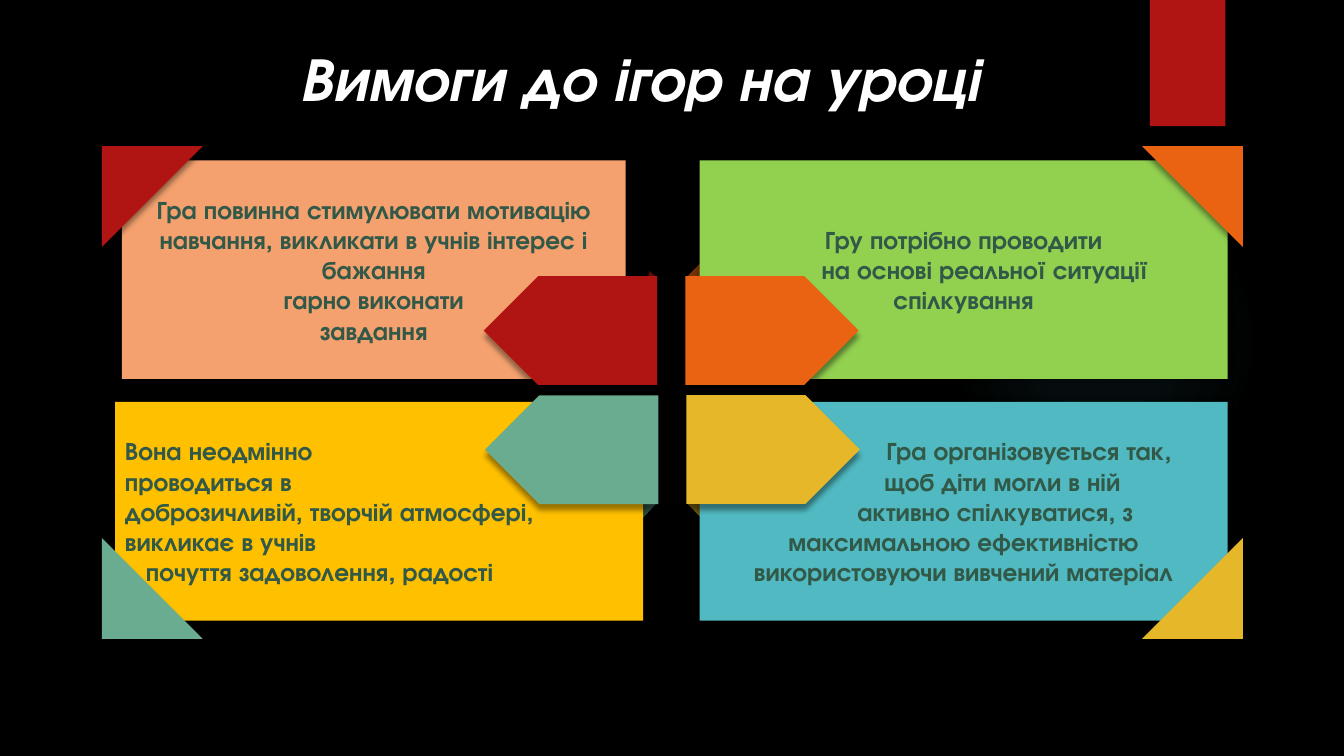
from lxml.etree import SubElement
from pptx import Presentation
from pptx.dml.color import RGBColor
from pptx.enum.shapes import MSO_SHAPE
from pptx.enum.text import MSO_ANCHOR, MSO_AUTO_SIZE, PP_ALIGN
from pptx.oxml import parse_xml
from pptx.oxml.ns import nsdecls, qn
from pptx.util import Cm, Pt

FONT = "TeX Gyre Adventor"
TEXT = "325948"
RED, ORANGE, GREEN, YELLOW, TEAL = "B01513", "EA6312", "6AAC90", "E6B729", "50B9C1"
CARD_H = 5.51
ARROW_W, ARROW_H = 4.37, 2.74
CORNER = 2.54

# left, top, width, fill, alignment, paragraphs as (first-line indent, text)
CARDS = [
    (2.9, 10.13, 13.31, "FFC000", PP_ALIGN.LEFT, [
        (0, "Вона неодмінно"),
        (0, "проводиться в"),
        (0, "доброзичливій, творчій атмосфері, викликає в учнів"),
        (0.53, "почуття задоволення, радості")]),
    (17.63, 10.13, 13.31, TEAL, PP_ALIGN.CENTER, [
        (3.3, "Гра організовується так,"),
        (1.96, "щоб діти могли в ній"),
        (1.6, "активно спілкуватися, з максимальною ефективністю "
              "використовуючи вивчений матеріал")]),
    (3.07, 4.04, 12.7, "F4A16F", PP_ALIGN.CENTER, [
        (0, "Гра повинна стимулювати мотивацію навчання, "
            "викликати в учнів інтерес і бажання"),
        (0, "гарно виконати"),
        (0, "завдання")]),
    (17.63, 4.04, 13.31, "92D050", PP_ALIGN.CENTER, [
        (0, "Гру потрібно проводити"),
        (1.07, "на основі реальної ситуації спілкування")]),
]
FOLDS = [
    ("580A09", [(16.33, 7.01), (16.56, 6.99), (16.36, 6.83)]),
    (TEXT, [(16.13, 12.7), (16.56, 12.67), (16.13, 13.13)]),
    ("795F0E", [(17.75, 12.7), (17.3, 12.67), (17.75, 13.13)]),
    ("753209", [(17.73, 6.99), (17.3, 6.99), (17.73, 6.55)]),
]
# left, top, rotation, fill
ARROWS = [(12.22, 9.96, 180, GREEN), (17.3, 9.96, 0, YELLOW),
          (12.19, 6.96, 180, RED), (17.27, 6.96, 0, ORANGE)]
CORNERS = [(2.57, 3.68, 90, RED), (28.78, 13.56, 270, YELLOW),
           (28.78, 3.68, 180, ORANGE), (2.57, 13.56, 0, GREEN)]


def rgb(value):
    return RGBColor.from_string(value)


def paint(sp, color, alpha=40, blur=4, dist=4):
    """Give a shape a plain fill, no line and a soft shadow below it."""
    sp.fill.solid()
    sp.fill.fore_color.rgb = rgb(color)
    sp.line.fill.background()
    sp.shadow.inherit = False
    effects = sp._element.spPr.find(qn("a:effectLst"))
    shadow = SubElement(effects, qn("a:outerShdw"), blurRad=str(Pt(blur)),
                        dist=str(Pt(dist)), dir="5400000", rotWithShape="0")
    black = SubElement(shadow, qn("a:srgbClr"), val="000000")
    SubElement(black, qn("a:alpha"), val=str(alpha * 1000))


def add_block(s, kind, left, top, width, height, color, rotation=0, **shadow):
    sp = s.shapes.add_shape(kind, Cm(left), Cm(top), Cm(width), Cm(height))
    sp.rotation = rotation
    paint(sp, color, **shadow)
    return sp


def add_run(p, text, size, color, italic=False):
    r = p.add_run()
    r.text = text
    r.font.name = FONT
    r.font.size = Pt(size)
    r.font.bold = True
    r.font.italic = italic
    r.font.color.rgb = rgb(color)


def add_card(s, left, top, width, color, align, lines):
    sp = add_block(s, MSO_SHAPE.RECTANGLE, left, top, width, CARD_H, color,
                   blur=5, dist=0)
    tf = sp.text_frame
    tf.word_wrap = True
    tf.vertical_anchor = MSO_ANCHOR.MIDDLE
    for i, (indent, text) in enumerate(lines):
        p = tf.add_paragraph() if i else tf.paragraphs[0]
        p.alignment = align
        if indent:
            p._p.get_or_add_pPr().set("indent", str(Cm(indent)))
        add_run(p, text, 18, TEXT)


def add_fold(s, color, points):
    start, *rest = [(Cm(x), Cm(y)) for x, y in points]
    builder = s.shapes.build_freeform(*start)
    builder.add_line_segments(rest, close=True)
    paint(builder.convert_to_shape(), color)


def add_glow(s):
    sp = s.shapes.add_shape(MSO_SHAPE.OVAL, Cm(23.9), Cm(4.65), Cm(7.82), Cm(7.82))
    sp.shadow.inherit = False
    sp.line.fill.background()
    sp.fill.background()
    stops = "".join(
        f'<a:gs pos="{pos}000"><a:srgbClr val="{TEAL}">'
        f'<a:alpha val="{alpha}000"/></a:srgbClr></a:gs>'
        for pos, alpha in [(0, 7), (36, 6), (69, 0)])
    gradient = parse_xml(
        f'<a:gradFill {nsdecls("a")}><a:gsLst>{stops}</a:gsLst><a:path path="circle">'
        '<a:fillToRect l="50000" t="50000" r="50000" b="50000"/></a:path></a:gradFill>')
    spPr = sp._element.spPr
    spPr.replace(spPr.find(qn("a:noFill")), gradient)


def set_title(s, text):
    title = s.shapes.title
    title.left, title.top, title.width, title.height = Cm(3.1), Cm(0.89), Cm(26.06), Cm(2.13)
    tf = title.text_frame
    tf.word_wrap = True
    tf.auto_size = MSO_AUTO_SIZE.NONE
    tf.vertical_anchor = MSO_ANCHOR.TOP
    p = tf.paragraphs[0]
    p.alignment = PP_ALIGN.CENTER
    add_run(p, text, 44, "FFFFFF", italic=True)


def main():
    prs = Presentation()
    prs.slide_width, prs.slide_height = Cm(33.87), Cm(19.05)
    s = prs.slides.add_slide(prs.slide_layouts[5])
    s.background.fill.solid()
    s.background.fill.fore_color.rgb = rgb("000000")
    set_title(s, "Вимоги до ігор на уроці")
    add_glow(s)
    add_block(s, MSO_SHAPE.RECTANGLE, 28.98, 0, 1.9, 3.18, RED, alpha=45, blur=3, dist=2)
    for fold in FOLDS:
        add_fold(s, *fold)
    for card in CARDS:
        add_card(s, *card)
    for left, top, rotation, color in ARROWS:
        add_block(s, MSO_SHAPE.PENTAGON, left, top, ARROW_W, ARROW_H, color, rotation)
    for left, top, rotation, color in CORNERS:
        add_block(s, MSO_SHAPE.RIGHT_TRIANGLE, left, top, CORNER, CORNER, color, rotation)
    prs.save("out.pptx")


if __name__ == "__main__":
    main()
